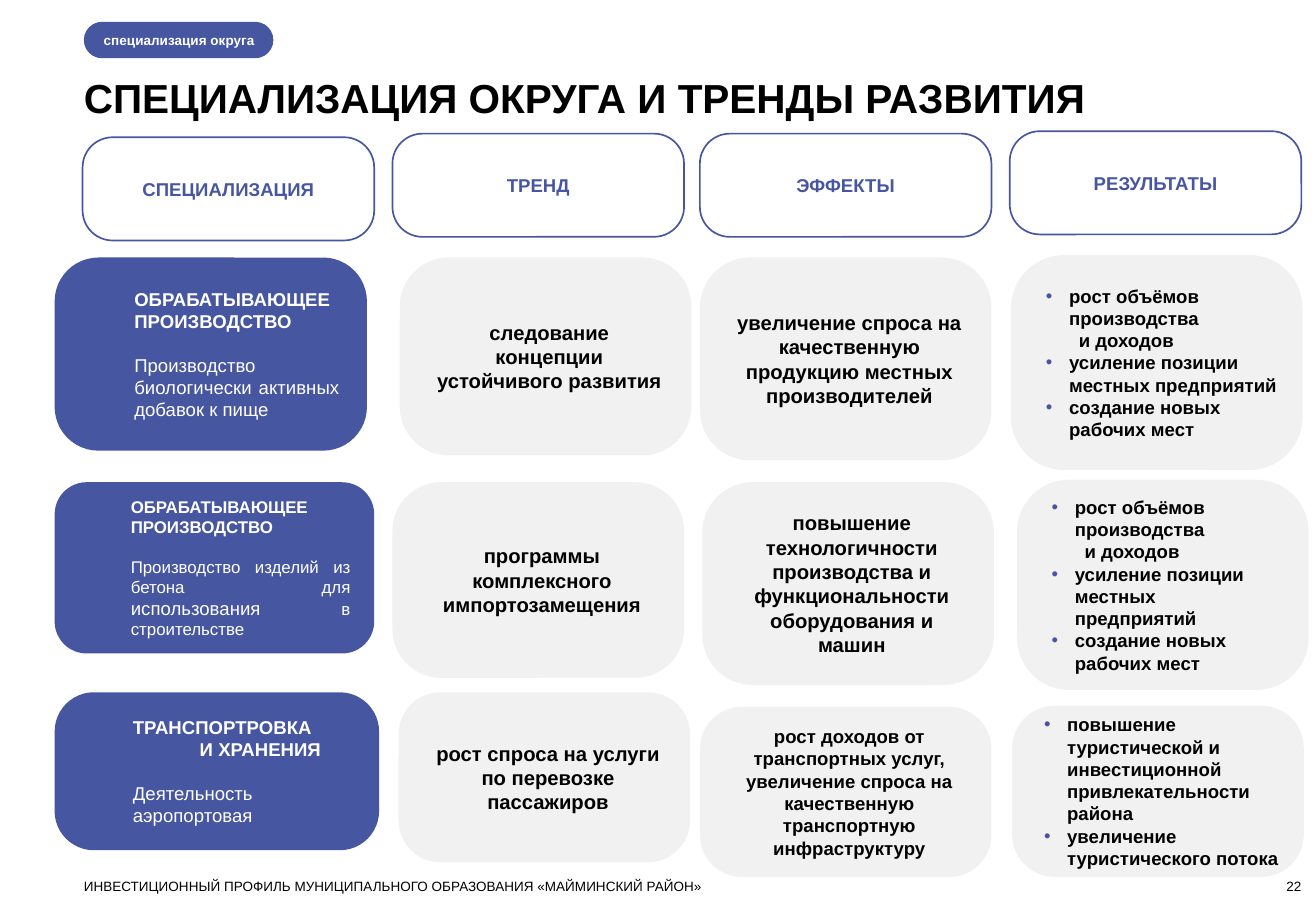
from pptx import Presentation
from pptx import util as u
from pptx.dml.color import RGBColor
from pptx.enum import shapes, text
from pptx.oxml.ns import qn
from lxml import etree

BLUE = RGBColor(0x47, 0x56, 0xA0)
GREY = RGBColor(0xF1, 0xF1, 0xF1)
WHITE = RGBColor(0xFF, 0xFF, 0xFF)
BLACK = RGBColor(0, 0, 0)
FONT = "Arial"
ALIGN = text.PP_ALIGN
ANCHOR = text.MSO_ANCHOR
CARD_WIDTH = 2.4
HANGING = 0.19

HEADERS = [
    ("СПЕЦИАЛИЗАЦИЯ", 0.68, 1.13),
    ("ТРЕНД", 3.23, 1.1),
    ("ЭФФЕКТЫ", 5.76, 1.1),
    ("РЕЗУЛЬТАТЫ", 8.31, 1.08),
]

SPECIALIZATIONS = [
    ((0.45, 2.12, 2.57, 1.59), 0.227, 11, [("ОБРАБАТЫВАЮЩЕЕ ПРОИЗВОДСТВО", 0)],
     [("Производство биологически активных добавок к пище", 11)]),
    ((0.45, 3.97, 2.63, 1.41), 0.187, 10, [("ОБРАБАТЫВАЮЩЕЕ ПРОИЗВОДСТВО", 0)],
     [("Производство изделий из бетона для ", 10), ("использования", 11),
      (" в строительстве", 10)]),
    ((0.45, 5.7, 2.67, 1.3), 0.248, 11, [("ТРАНСПОРТРОВКА", 0), ("И ХРАНЕНИЯ", 0.55)],
     [("Деятельность аэропортовая", 11)]),
]

STATEMENTS = [
    ((3.29, 2.12, CARD_WIDTH, 1.63), 12, "следование концепции устойчивого развития"),
    ((3.23, 3.97, CARD_WIDTH, 1.61), 12, "программы комплексного импортозамещения"),
    ((3.28, 5.7, CARD_WIDTH, 1.4), 12, "рост спроса на услуги по перевозке пассажиров"),
    ((5.76, 2.12, CARD_WIDTH, 1.67), 12,
     "увеличение спроса на качественную продукцию местных производителей"),
    ((5.78, 3.97, CARD_WIDTH, 1.67), 12,
     "повышение технологичности производства и функциональности оборудования и машин"),
    ((5.76, 5.82, CARD_WIDTH, 1.4), 11,
     "рост доходов от транспортных услуг, увеличение спроса на качественную "
     "транспортную инфраструктуру"),
]

GROWTH = [
    ("рост объёмов производства", True),
    ("и доходов", False),
    ("усиление позиции местных предприятий", True),
    ("создание новых рабочих мест", True),
]
TOURISM = [
    ("повышение туристической и инвестиционной привлекательности района", True),
    ("увеличение туристического потока", True),
]
RESULTS = [
    ((8.32, 2.1, CARD_WIDTH, 1.77), 0.08, GROWTH),
    ((8.37, 3.95, CARD_WIDTH, 1.73), 0.1, GROWTH),
    ((8.33, 5.81, CARD_WIDTH, 1.41), 0.1, TOURISM),
]


def prepare_frame(frame, insets, anchor):
    frame.word_wrap = True
    frame.vertical_anchor = anchor
    frame.margin_left, frame.margin_top, frame.margin_right, frame.margin_bottom = map(
        u.Inches, insets)
    return frame


def add_card(slide, box, rounding, insets, fill=None, outline=None):
    card = slide.shapes.add_shape(
        shapes.MSO_SHAPE.ROUNDED_RECTANGLE, *map(u.Inches, box))
    card.adjustments[0] = rounding
    card.shadow.inherit = False
    if fill is None:
        card.fill.background()
    else:
        card.fill.solid()
        card.fill.fore_color.rgb = fill
    if outline is None:
        card.line.fill.background()
    else:
        card.line.color.rgb = outline
        card.line.width = u.Pt(1)
    return prepare_frame(card.text_frame, insets, ANCHOR.MIDDLE)


def next_paragraph(frame, align, left=0, hanging=0):
    first = frame.paragraphs[0]
    paragraph = frame.add_paragraph() if first.runs else first
    paragraph.alignment = align
    properties = paragraph._p.get_or_add_pPr()
    properties.set("marL", str(u.Inches(left)))
    properties.set("indent", str(-u.Inches(hanging)))
    return paragraph


def add_bullet(paragraph):
    properties = paragraph._p.get_or_add_pPr()
    colour = etree.SubElement(properties, qn("a:buClr"))
    etree.SubElement(colour, qn("a:srgbClr")).set("val", str(BLUE))
    etree.SubElement(properties, qn("a:buFont")).set("typeface", FONT)
    etree.SubElement(properties, qn("a:buChar")).set("char", "•")


def add_run(paragraph, words, size, colour, bold=False):
    run = paragraph.add_run()
    run.text = words
    run.font.name = FONT
    run.font.size = u.Pt(size)
    run.font.bold = bold
    run.font.color.rgb = colour


def add_label(slide, box, words, size, bold=False, align=ALIGN.LEFT, anchor=ANCHOR.TOP):
    label = slide.shapes.add_textbox(*map(u.Inches, box))
    frame = prepare_frame(label.text_frame, (0, 0, 0, 0), anchor)
    add_run(next_paragraph(frame, align), words, size, BLACK, bold)


def add_section_tag(slide, box):
    frame = add_card(slide, box, 0.5, (0.12, 0, 0, 0), fill=BLUE)
    add_run(next_paragraph(frame, ALIGN.LEFT), "специализация округа", 8, WHITE, True)


def add_header(slide, box, words):
    frame = add_card(slide, box, 0.291, (0.1, 0.05, 0.1, 0.05), outline=BLUE)
    add_run(next_paragraph(frame, ALIGN.CENTER), words, 11, BLUE, True)


def add_specialization(slide, box, rounding, size, industry, activity):
    frame = add_card(slide, box, rounding, (0.55, 0.05, 0.12, 0.05), fill=BLUE)
    for words, left in industry:
        add_run(next_paragraph(frame, ALIGN.JUSTIFY, left), words, size, WHITE, True)
    description = next_paragraph(frame, ALIGN.JUSTIFY)
    description.space_before = u.Pt(size * 1.15)
    for words, run_size in activity:
        add_run(description, words, run_size, WHITE)


def add_statement(slide, box, size, words):
    frame = add_card(slide, box, 0.248, (0.16, 0.05, 0.1, 0.05), fill=GREY)
    add_run(next_paragraph(frame, ALIGN.CENTER), words, size, BLACK, True)


def add_results(slide, box, right_inset, results):
    frame = add_card(slide, box, 0.248, (0.16, 0.05, right_inset, 0.05), fill=GREY)
    for words, bulleted in results:
        if bulleted:
            paragraph = next_paragraph(frame, ALIGN.LEFT, HANGING, HANGING)
            add_bullet(paragraph)
        else:
            paragraph = next_paragraph(frame, ALIGN.LEFT, HANGING + 0.08)
        add_run(paragraph, words, 11, BLACK, True)


def add_footer(slide, box):
    left, top, width, height = box
    add_label(slide, (left, top, 8, height),
              "ИНВЕСТИЦИОННЫЙ ПРОФИЛЬ МУНИЦИПАЛЬНОГО ОБРАЗОВАНИЯ «МАЙМИНСКИЙ РАЙОН»", 8)
    add_label(slide, (left + width - 0.8, top, 0.8, 0.13), "22", 8,
              align=ALIGN.RIGHT, anchor=ANCHOR.BOTTOM)


def main():
    deck = Presentation()
    deck.slide_width = u.Inches(10.83)
    deck.slide_height = u.Inches(7.5)
    slide = deck.slides.add_slide(deck.slide_layouts[6])
    add_section_tag(slide, (0.69, 0.18, 1.56, 0.3))
    add_label(slide, (0.69, 0.6, 10.02, 0.4),
              "СПЕЦИАЛИЗАЦИЯ ОКРУГА И ТРЕНДЫ РАЗВИТИЯ", 24, bold=True)
    for words, left, top in HEADERS:
        add_header(slide, (left, top, CARD_WIDTH, 0.85), words)
    for specialization in SPECIALIZATIONS:
        add_specialization(slide, *specialization)
    for statement in STATEMENTS:
        add_statement(slide, *statement)
    for result in RESULTS:
        add_results(slide, *result)
    add_footer(slide, (0.69, 7.23, 10.02, 0.27))
    deck.save("out.pptx")


if __name__ == "__main__":
    main()
